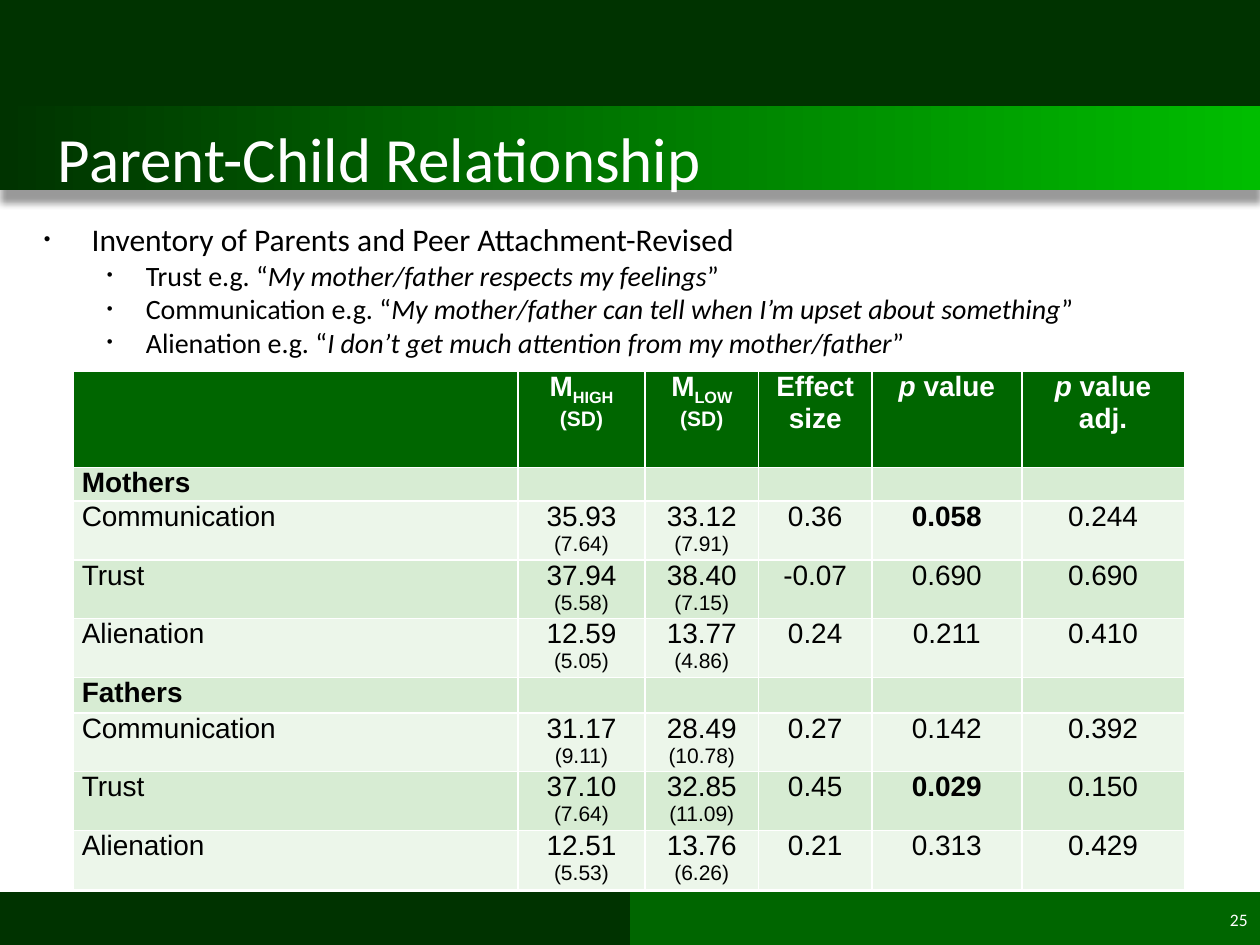
from typing import NamedTuple

from lxml.etree import SubElement
from pptx import Presentation
from pptx.dml.color import RGBColor
from pptx.enum.shapes import MSO_SHAPE
from pptx.enum.text import MSO_ANCHOR, MSO_AUTO_SIZE, PP_ALIGN
from pptx.oxml.ns import qn
from pptx.util import Inches, Pt

WHITE = RGBColor(0xFF, 0xFF, 0xFF)
BLACK = RGBColor(0x00, 0x00, 0x00)
DARK_GREEN = RGBColor(0x00, 0x33, 0x00)
GREEN = RGBColor(0x00, 0x66, 0x00)
BRIGHT_GREEN = RGBColor(0x00, 0xBD, 0x00)
ROW_TINT = RGBColor(0xD7, 0xEC, 0xD3)
ROW_LIGHT = RGBColor(0xEC, 0xF6, 0xEA)

COL_WIDTHS = (3.53, 1.01, 0.9, 0.9, 1.19, 1.29)
HEADER_H, SCORE_H = 0.76, 0.435
GROUP_HEIGHTS = {"Mothers": 0.25, "Fathers": 0.28}


class Run(NamedTuple):
    text: str
    size: float = 16
    bold: bool = False
    italic: bool = False
    subscript: bool = False


class Band(NamedTuple):
    left: float
    top: float
    width: float
    height: float
    color: RGBColor
    glossy: bool = False


class Score(NamedTuple):
    scale: str
    high: tuple[str, str]
    low: tuple[str, str]
    effect: str
    p_value: str
    p_adjusted: str
    significant: bool = False


BANDS = (
    Band(5, 7.08, 5, 0.42, GREEN),
    Band(0, 7.08, 5, 0.42, DARK_GREEN),
    Band(0, 0.68, 10, 0.83, DARK_GREEN, glossy=True),
    Band(0, -0.03, 10, 0.87, DARK_GREEN),
)

EXAMPLES = (
    ("Trust", "My mother/father respects my feelings"),
    ("Communication", "My mother/father can tell when I’m upset about something"),
    ("Alienation", "I don’t get much attention from my mother/father"),
)

GROUPS = {
    "Mothers": (
        Score("Communication", ("35.93", "7.64"), ("33.12", "7.91"), "0.36", "0.058", "0.244", True),
        Score("Trust", ("37.94", "5.58"), ("38.40", "7.15"), "-0.07", "0.690", "0.690"),
        Score("Alienation", ("12.59", "5.05"), ("13.77", "4.86"), "0.24", "0.211", "0.410"),
    ),
    "Fathers": (
        Score("Communication", ("31.17", "9.11"), ("28.49", "10.78"), "0.27", "0.142", "0.392"),
        Score("Trust", ("37.10", "7.64"), ("32.85", "11.09"), "0.45", "0.029", "0.150", True),
        Score("Alienation", ("12.51", "5.53"), ("13.76", "6.26"), "0.21", "0.313", "0.429"),
    ),
}


def add_runs(p, runs: list[Run], font: str, color: RGBColor) -> None:
    for run in runs:
        r = p.add_run()
        r.text = run.text
        r.font.name, r.font.size = font, Pt(run.size)
        r.font.bold, r.font.italic = run.bold, run.italic
        r.font.color.rgb = color
        if run.subscript:
            r.font._element.set("baseline", "-25000")


def add_band(s, band: Band) -> None:
    sp = s.shapes.add_shape(MSO_SHAPE.RECTANGLE, *map(Inches, band[:4]))
    sp.shadow.inherit = False
    sp.line.fill.background()
    if not band.glossy:
        sp.fill.solid()
        sp.fill.fore_color.rgb = band.color
        return
    sp.fill.gradient()
    sp.fill.gradient_angle = 0
    for stop, color in zip(sp.fill.gradient_stops, (band.color, BRIGHT_GREEN)):
        stop.color.rgb = color
    effects = sp._element.spPr.find(qn("a:effectLst"))
    shadow = SubElement(effects, qn("a:outerShdw"), blurRad=str(Pt(4)), dist=str(Pt(7)),
                        dir="5400000", rotWithShape="0")
    shade = SubElement(shadow, qn("a:srgbClr"), val=str(BLACK))
    SubElement(shade, qn("a:alpha"), val="40000")


def set_bullet(p, margin: float, hanging: float) -> None:
    pPr = p._p.get_or_add_pPr()
    pPr.set("marL", str(Inches(margin)))
    pPr.set("indent", str(-Inches(hanging)))
    SubElement(pPr, qn("a:buSzPct"), val="60000")
    SubElement(pPr, qn("a:buFont"), typeface="Arial")
    SubElement(pPr, qn("a:buChar"), char="•")


def add_title(s) -> None:
    sp = s.shapes.title
    s.shapes._spTree.append(sp._element)  # bring in front of the bands
    sp.left, sp.top, sp.width, sp.height = map(Inches, (0.16, 0.84, 9.85, 0.81))
    tf = sp.text_frame
    tf.auto_size = MSO_AUTO_SIZE.NONE
    tf.vertical_anchor = MSO_ANCHOR.MIDDLE
    p = tf.paragraphs[0]
    p.alignment = PP_ALIGN.LEFT
    p._p.get_or_add_pPr().set("marL", str(Inches(0.2)))
    add_runs(p, [Run("Parent-Child Relationship", 36)], "Calibri", WHITE)


def add_body(s) -> None:
    tf = s.shapes.add_textbox(*map(Inches, (0.25, 1.7, 9.17, 1.36))).text_frame
    tf.word_wrap = True
    p = tf.paragraphs[0]
    set_bullet(p, 0.38, 0.38)
    add_runs(p, [Run("Inventory of Parents and Peer Attachment-Revised", 18)], "Calibri", BLACK)
    for scale, quote in EXAMPLES:
        p = tf.add_paragraph()
        p.level = 1
        set_bullet(p, 0.81, 0.31)
        runs = [Run(f"{scale} e.g. “"), Run(quote, italic=True), Run("”")]
        add_runs(p, runs, "Calibri", BLACK)


def add_slide_number(s) -> None:
    tf = s.shapes.add_textbox(*map(Inches, (8.83, 7.1, 1.17, 0.4))).text_frame
    tf.word_wrap = True
    tf.vertical_anchor = MSO_ANCHOR.MIDDLE
    p = tf.paragraphs[0]
    p.alignment = PP_ALIGN.RIGHT
    add_runs(p, [Run("25", 10)], "Calibri", WHITE)


def header_cells() -> list[list[list[Run]]]:
    """Cells as lists of paragraphs, each a list of runs."""
    means = [[[Run("M", bold=True), Run(group, bold=True, subscript=True)],
              [Run("(SD)", 12, bold=True)]] for group in ("HIGH", "LOW")]
    p_values = [[[Run("p", bold=True, italic=True), Run(label, bold=True)]]
                for label in (" value", " value adj.")]
    return [[], *means, [[Run("Effect size", bold=True)]], *p_values]


def score_cells(score: Score) -> list[list[list[Run]]]:
    means = [[[Run(mean)], [Run(f"({sd})", 12)]] for mean, sd in (score.high, score.low)]
    return [[[Run(score.scale)]], *means, [[Run(score.effect)]],
            [[Run(score.p_value, bold=score.significant)]], [[Run(score.p_adjusted)]]]


def fill_cell(cell, paragraphs: list[list[Run]], fill: RGBColor, color: RGBColor,
              align: PP_ALIGN) -> None:
    cell.fill.solid()
    cell.fill.fore_color.rgb = fill
    cell.margin_left = cell.margin_right = Inches(0.07)
    cell.margin_top = cell.margin_bottom = 0
    tf = cell.text_frame
    if not paragraphs:  # keeps an empty cell from stretching its row
        SubElement(tf.paragraphs[0]._p, qn("a:endParaRPr"), sz="1200")
    for i, runs in enumerate(paragraphs):
        p = tf.add_paragraph() if i else tf.paragraphs[0]
        p.alignment = align
        add_runs(p, runs, "Arial", color)


def add_score_table(s) -> None:
    rows = [(HEADER_H, header_cells())]
    for group, scores in GROUPS.items():
        blanks = [[] for _ in COL_WIDTHS[1:]]
        rows.append((GROUP_HEIGHTS[group], [[[Run(group, bold=True)]], *blanks]))
        rows += [(SCORE_H, score_cells(score)) for score in scores]
    frame = s.shapes.add_table(len(rows), len(COL_WIDTHS), Inches(0.58), Inches(2.95),
                               Inches(sum(COL_WIDTHS)), Inches(sum(h for h, _ in rows)))
    table = frame.table
    for column, width in zip(table.columns, COL_WIDTHS):
        column.width = Inches(width)
    for i, (height, cells) in enumerate(rows):
        table.rows[i].height = Inches(height)
        fill = (ROW_TINT if i % 2 else ROW_LIGHT) if i else GREEN
        for j, paragraphs in enumerate(cells):
            fill_cell(table.cell(i, j), paragraphs, fill, BLACK if i else WHITE,
                      PP_ALIGN.CENTER if j else PP_ALIGN.LEFT)


def main() -> None:
    prs = Presentation()
    prs.slide_width, prs.slide_height = Inches(10), Inches(7.5)
    s = prs.slides.add_slide(prs.slide_layouts[5])
    for band in BANDS:
        add_band(s, band)
    add_body(s)
    add_title(s)
    add_slide_number(s)
    add_score_table(s)
    prs.save("out.pptx")


if __name__ == "__main__":
    main()
